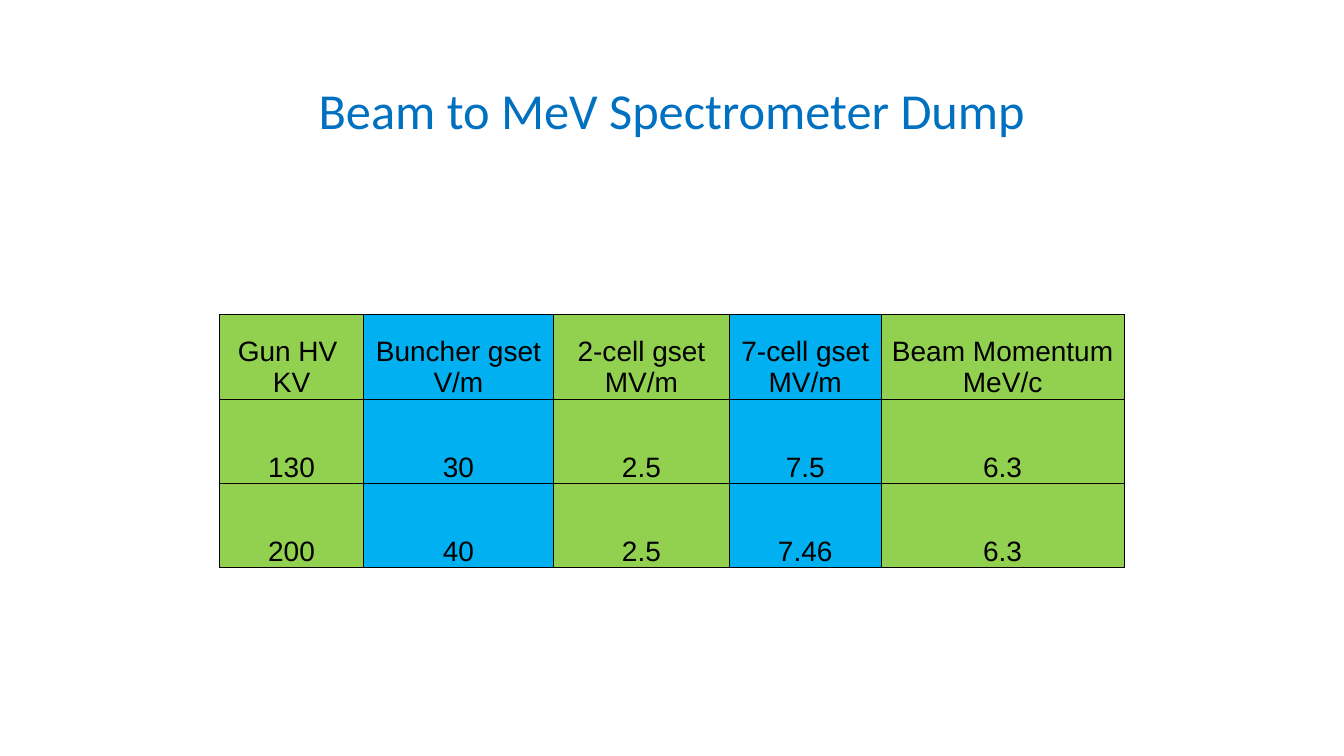
import pptx
import pptx.dml.color
import pptx.enum.text
import pptx.oxml
import pptx.oxml.ns
import pptx.util

Pt = pptx.util.Pt
COLORS = {"title": "0070C0", "text": "000000", "border": "000000",
          "green": "92D050", "blue": "00B0F0"}
COLUMN_WIDTHS = [102.5, 136, 125.5, 108.5, 173.5]
ROW_HEIGHT = 60.3
BEAM_SETTINGS = [
    ["Gun HV \nKV", "Buncher gset\nV/m", "2-cell gset\nMV/m",
     "7-cell gset\nMV/m", "Beam Momentum\nMeV/c"],
    ["130", "30", "2.5", "7.5", "6.3"],
    ["200", "40", "2.5", "7.46", "6.3"],
]


def rgb(name):
    return pptx.dml.color.RGBColor.from_string(COLORS[name])


class SlideBuilder:
    def __init__(self, slide):
        self.slide = slide
        self.title_font = "Calibri"
        self.table_font = "Arial"

    def format_text(self, frame, font, size, color):
        for para in frame.paragraphs:
            para.alignment = pptx.enum.text.PP_ALIGN.CENTER
            for span in para.runs:
                span.font.name = font
                span.font.size = Pt(size)
                span.font.color.rgb = rgb(color)

    def add_title(self, text, left, top, width, height):
        title = self.slide.shapes.title
        title.left, title.top = Pt(left), Pt(top)
        title.width, title.height = Pt(width), Pt(height)
        frame = title.text_frame
        frame.text = text
        frame.vertical_anchor = pptx.enum.text.MSO_ANCHOR.MIDDLE
        frame.paragraphs[0].line_spacing = 0.9
        self.format_text(frame, self.title_font, 36, "title")

    def add_borders(self, cell, width):
        properties = cell._tc.get_or_add_tcPr()
        namespace = pptx.oxml.ns.nsdecls("a")
        for side in ("lnL", "lnR", "lnT", "lnB"):
            properties.append(pptx.oxml.parse_xml(
                f'<a:{side} {namespace} w="{Pt(width)}"><a:solidFill>'
                f'<a:srgbClr val="{COLORS["border"]}"/></a:solidFill></a:{side}>'))

    def format_cell(self, cell, text, fill):
        self.add_borders(cell, 0.5)
        cell.fill.solid()
        cell.fill.fore_color.rgb = rgb(fill)
        cell.margin_left = cell.margin_right = cell.margin_top = Pt(0.7)
        cell.margin_bottom = Pt(0)
        cell.vertical_anchor = pptx.enum.text.MSO_ANCHOR.BOTTOM
        cell.text_frame.text = text
        self.format_text(cell.text_frame, self.table_font, 20, "text")

    def add_table(self, rows, left, top, column_widths, row_height):
        """Add a bordered table whose columns alternate green and blue."""
        table = self.slide.shapes.add_table(
            len(rows), len(column_widths), Pt(left), Pt(top),
            Pt(sum(column_widths)), Pt(row_height * len(rows))).table
        for column, width in zip(table.columns, column_widths):
            column.width = Pt(width)
        for row_index, texts in enumerate(rows):
            table.rows[row_index].height = Pt(row_height)
            for column_index, text in enumerate(texts):
                fill = ("green", "blue")[column_index % 2]
                self.format_cell(table.cell(row_index, column_index), text, fill)


def main():
    deck = pptx.Presentation()
    deck.slide_width, deck.slide_height = Pt(960), Pt(540)
    title_only = deck.slide_layouts[5]
    builder = SlideBuilder(deck.slides.add_slide(title_only))
    builder.add_title("Beam to MeV Spectrometer Dump", 66, 28.75, 828, 104.4)
    builder.add_table(BEAM_SETTINGS, 157, 224.6, COLUMN_WIDTHS, ROW_HEIGHT)
    deck.save("out.pptx")


if __name__ == "__main__":
    main()
